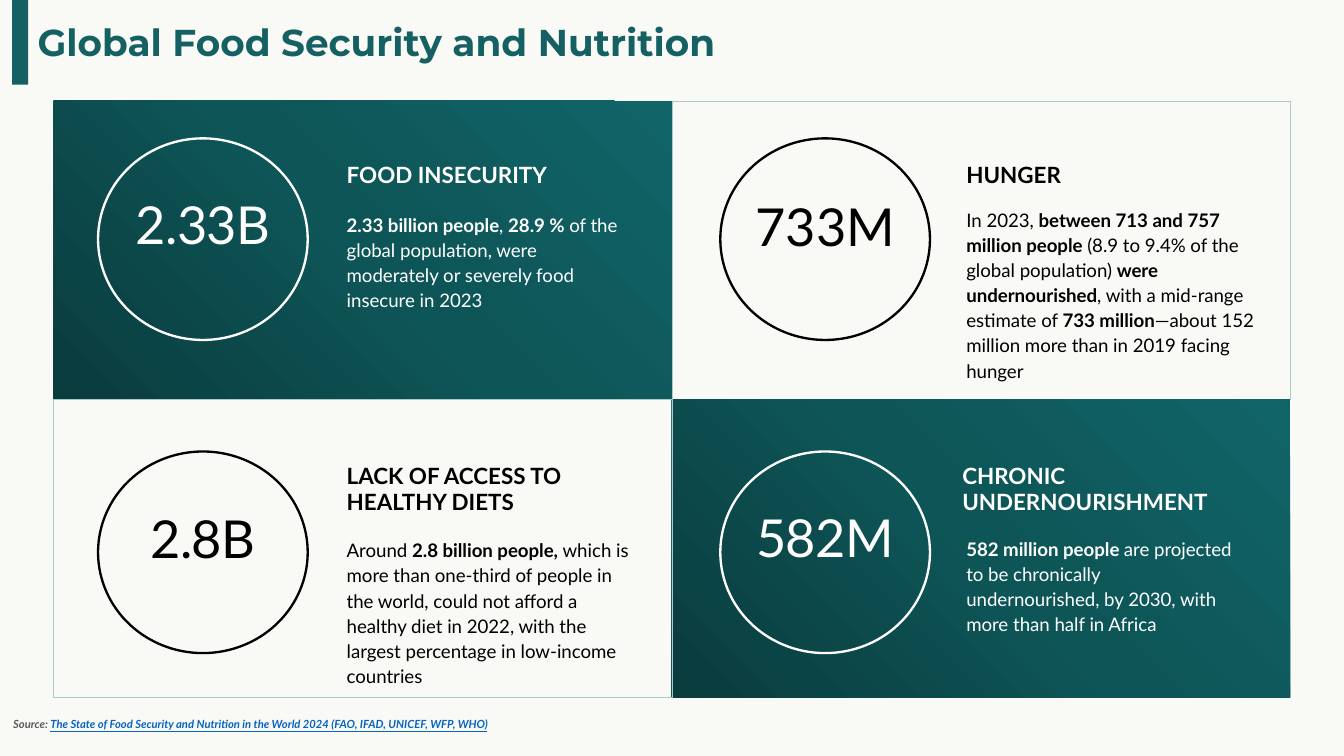
from dataclasses import dataclass

from lxml.etree import fromstring
from pptx import Presentation
from pptx.dml.color import RGBColor
from pptx.enum.shapes import MSO_SHAPE as Shape
from pptx.enum.text import MSO_ANCHOR as Anchor, MSO_AUTO_SIZE as AutoSize, PP_ALIGN as Align
from pptx.oxml.ns import nsdecls
from pptx.util import Inches, Pt


@dataclass(frozen=True)
class Theme:
    """Colours, fonts and type sizes of the deck."""
    paper: str = "F9F9F5"
    teal: str = "156063"
    rule: str = "A8CBCC"
    white: str = "FFFFFF"
    black: str = "000000"
    grey: str = "595959"
    link: str = "0563C1"
    gradient: tuple = ((0, "0A3B3D"), (50, "0E5557"), (100, "106468"))
    title_font: str = "Montserrat"
    font: str = "Lato"
    title: int = 20
    figure: int = 28
    heading: int = 12
    body: int = 10
    source: int = 6


@dataclass(frozen=True)
class Fact:
    """One quadrant; boxes are (column, row, columns, rows)."""
    side: int
    level: int
    dark: bool
    figure: str
    figure_row: float
    spacing: int
    heading: str
    heading_column: float
    body: str
    body_box: tuple


FACTS = (
    Fact(1, 0, False, "733M", 16.8, 0, "HUNGER", 71.9,
         "In 2023, **between 713 and 757 million people** (8.9 to 9.4% of the global population) "
         "**were undernourished**, with a mid-range estimate of **733 million**—about 152 million "
         "more than in 2019 facing hunger", (71.9, 15.3, 23.2, 10.1)),
    Fact(1, 1, True, "582M", 39.9, -20, "CHRONIC\nUNDERNOURISHMENT", 71.6,
         "**582 million people **are projected to be chronically undernourished, by 2030, "
         "with more than half in Africa", (71.9, 39.8, 20, 7.1)),
    Fact(0, 0, True, "2.33B", 16.6, -20, "FOOD INSECURITY", 25.8,
         "**2.33 billion people**, **28.9 % **of the global population, were moderately or "
         "severely food insecure in 2023", (25.8, 15.7, 20.8, 6.7)),
    Fact(0, 1, False, "2.8B", 40, -20, "LACK OF ACCESS TO HEALTHY DIETS", 25.8,
         "Around **2.8 billion people, **which is more than one-third of people in the world, "
         "could not afford a healthy diet in 2022, with the largest percentage in low-income "
         "countries", (25.8, 39.9, 21.3, 5)),
)


def write_text(frame, text, *, font, size, color, bold=False, italic=False, align=Align.LEFT,
               leading=0.9, spacing=0, link=None):
    """Fill a frame; newlines split paragraphs, ** toggles bold, || starts the link colour."""
    for index, line in enumerate(text.split("\n")):
        para = frame.add_paragraph() if index else frame.paragraphs[0]
        para.alignment, para.line_spacing = align, leading
        for linked, part in enumerate(line.split("||")):
            for toggled, words in enumerate(part.split("**")):
                if not words:
                    continue
                span = para.add_run()
                span.text = words
                span.font.name, span.font.size = font, Pt(size)
                span.font.bold, span.font.italic = bold or toggled % 2 == 1, italic
                span.font.color.rgb = RGBColor.from_string(link if linked else color)
                if linked:
                    span.font.underline = True
                if spacing:
                    span._r.get_or_add_rPr().set("spc", str(spacing))


class Canvas:
    """Draws on the current slide, on a grid of 100 columns by 56.25 rows."""

    COLUMNS = 100

    def __init__(self, deck, theme):
        """Add a title-only slide with the theme's background."""
        self.theme = theme
        self.unit = deck.slide_width / self.COLUMNS
        self.slide = deck.slides.add_slide(deck.slide_layouts[5])
        self.slide.background.fill.solid()
        self.slide.background.fill.fore_color.rgb = RGBColor.from_string(theme.paper)

    def place(self, *box):
        """Turn grid cells into lengths."""
        return [round(cells * self.unit) for cells in box]

    def frame(self, box, anchor=Anchor.TOP, inset=(0, 0)):
        """Set up the text frame of a box."""
        frame = box.text_frame
        frame.word_wrap, frame.auto_size = True, AutoSize.NONE
        frame.vertical_anchor = anchor
        frame.margin_left = frame.margin_right = Inches(inset[0])
        frame.margin_top = frame.margin_bottom = Inches(inset[1])
        return frame

    def title(self, text, *box):
        """Move and format the title placeholder."""
        title = self.slide.shapes.title
        title.left, title.top, title.width, title.height = self.place(*box)
        write_text(self.frame(title), text, font=self.theme.title_font,
                   size=self.theme.title, color=self.theme.teal, bold=True)

    def text(self, text, box, anchor=Anchor.TOP, inset=(0, 0), **style):
        """Add a wrapped text box."""
        area = self.slide.shapes.add_textbox(*self.place(*box))
        write_text(self.frame(area, anchor, inset), text, font=self.theme.font, **style)

    def shape(self, kind, box, fill=None, line=None, weight=0.25):
        """Add a preset shape with an optional fill and outline."""
        shape = self.slide.shapes.add_shape(kind, *self.place(*box))
        shape.shadow.inherit = False
        if fill:
            shape.fill.solid()
            shape.fill.fore_color.rgb = RGBColor.from_string(fill)
        else:
            shape.fill.background()
        if line:
            shape.line.color.rgb = RGBColor.from_string(line)
            shape.line.width = Pt(weight)
        else:
            shape.line.fill.background()
        return shape

    def gradient_panel(self, box):
        """Add a panel shaded outwards from its lower left corner."""
        panel = self.shape(Shape.ROUNDED_RECTANGLE, box, fill=self.theme.teal)
        panel.adjustments[0] = 0
        stops = "".join(f'<a:gs pos="{share * 1000}"><a:srgbClr val="{color}"/></a:gs>'
                        for share, color in self.theme.gradient)
        solid = panel._element.spPr.find("{*}solidFill")
        solid.getparent().replace(solid, fromstring(
            f'<a:gradFill {nsdecls("a")} rotWithShape="1"><a:gsLst>{stops}</a:gsLst>'
            '<a:path path="circle"><a:fillToRect t="100000" r="100000"/></a:path></a:gradFill>'))

    def fact(self, fact):
        """Draw one quadrant with its circle, figure, heading and body."""
        theme = self.theme
        ink = theme.white if fact.dark else theme.black
        panel = (4 + 46 * fact.side, 7.5 + 22.2 * fact.level, 46, 22.2)
        if fact.dark:
            self.gradient_panel(panel)
        else:
            self.shape(Shape.RECTANGLE, panel, line=theme.rule)
        column, row = 7.3 + 46.3 * fact.side, 10.3 + 23.3 * fact.level
        self.shape(Shape.OVAL, (column, row, 15.6, 15), line=ink, weight=1.25)
        self.text(fact.figure, (column, fact.figure_row, 15.6, 2.1), size=theme.figure,
                  color=ink, align=Align.CENTER, leading=Pt(16.9), spacing=fact.spacing)
        self.text(fact.heading, (fact.heading_column, 11 + 24.3 * fact.level, 19.1, 3),
                  anchor=Anchor.BOTTOM, size=theme.heading, color=ink, bold=True,
                  leading=Pt(13.5))
        self.text(fact.body, fact.body_box, size=theme.body, color=ink, leading=Pt(13.5))


def main():
    """Build and save the deck."""
    deck = Presentation()
    deck.slide_width, deck.slide_height = Inches(10), Inches(5.625)
    theme = Theme()
    canvas = Canvas(deck, theme)
    canvas.title("Global Food Security and Nutrition", 2.8, 1.8, 96.7, 3)
    canvas.shape(Shape.RECTANGLE, (0.9, 0, 1.2, 6.3), fill=theme.teal)
    for fact in FACTS:
        canvas.fact(fact)
    canvas.text("Source: ||The State of Food Security and Nutrition in the World 2024 "
                "(FAO, IFAD, UNICEF, WFP, WHO)", (0, 53, 38.8, 2.8), inset=(0.1, 0.05),
                size=theme.source, color=theme.grey, bold=True, italic=True, link=theme.link)
    deck.save("out.pptx")


if __name__ == "__main__":
    main()
